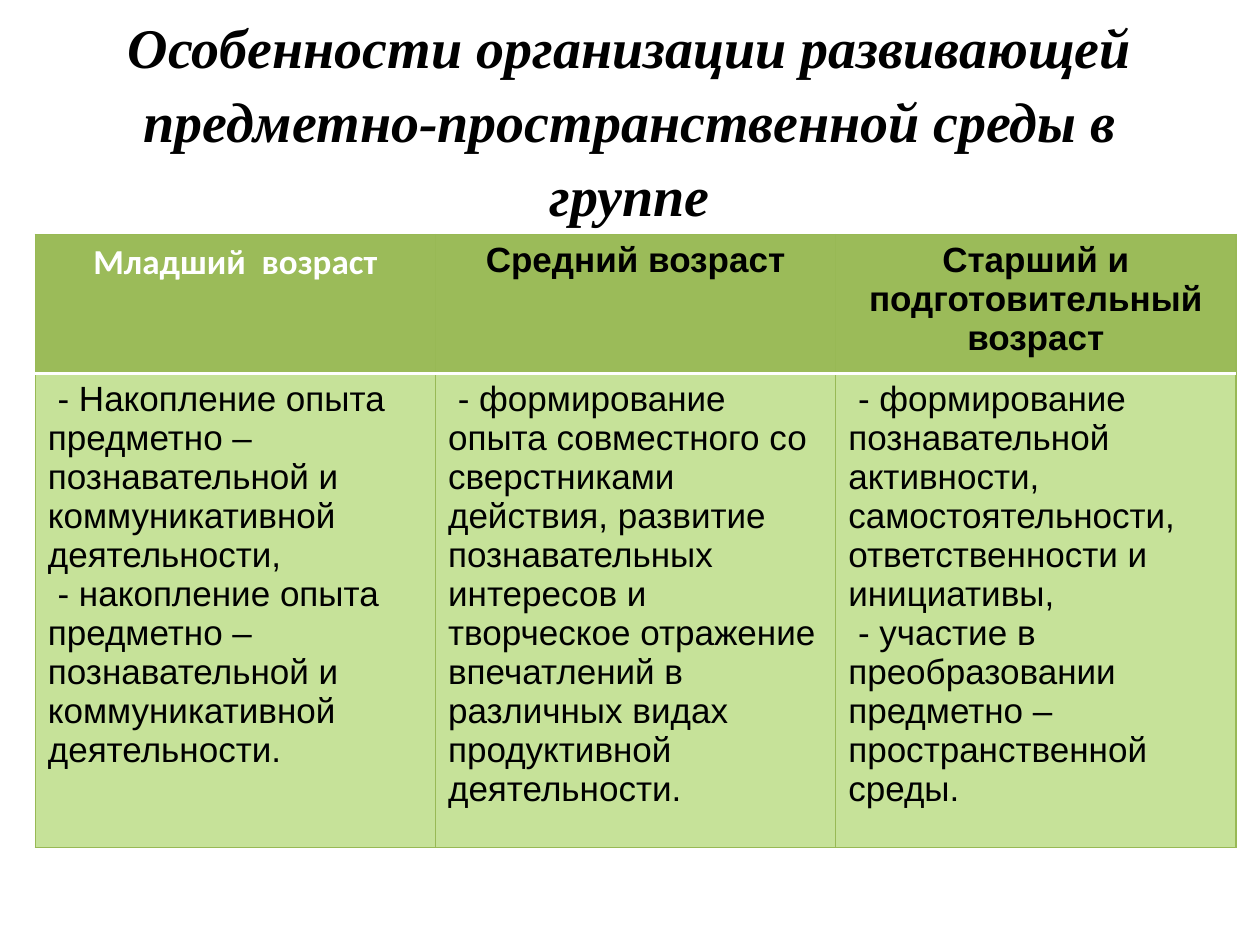
"""Build a slide comparing the learning environment by age group."""
from lxml.etree import SubElement
from pptx import Presentation
from pptx.dml.color import RGBColor
from pptx.enum.text import MSO_ANCHOR, PP_ALIGN
from pptx.oxml.ns import qn
from pptx.util import Inches, Pt

TITLE = "Особенности организации развивающей предметно-пространственной среды в группе"
AGES = [
    ("Младший  возраст", "Calibri", "FFFFFF", [
        " - Накопление опыта предметно – познавательной и коммуникативной деятельности,",
        " - накопление опыта предметно – познавательной и коммуникативной деятельности.",
    ]),
    ("Средний возраст", "Arial", "000000", [
        " - формирование опыта совместного со сверстниками действия, развитие познавательных "
        "интересов и творческое отражение впечатлений в различных видах продуктивной деятельности.",
    ]),
    ("Старший и подготовительный возраст", "Arial", "000000", [
        " - формирование познавательной активности, самостоятельности, ответственности и инициативы,",
        " - участие в преобразовании предметно – пространственной среды.",
    ]),
]
HEADER_FILL, BODY_FILL, BORDER, DIVIDER = "9BBB59", "C6E299", "98B955", "FFFFFF"
ROW_HEIGHTS = [1.03, 3.51]
TABLE_WIDTH = 9.53


def color(value):
    return RGBColor.from_string(value)


def style_text(frame, font, size, value, align, bold=False, italic=False):
    for para in frame.paragraphs:
        para.alignment = align
        for span in para.runs:
            span.font.name = font
            span.font.size = Pt(size)
            span.font.color.rgb = color(value)
            span.font.bold = bold
            span.font.italic = italic


def set_borders(cell, borders):
    properties = cell._tc.get_or_add_tcPr()
    for index, (side, (value, width)) in enumerate(borders.items()):
        line = SubElement(properties, qn(f"a:ln{side}"), w=str(Pt(width)))
        fill = SubElement(line, qn("a:solidFill"))
        SubElement(fill, qn("a:srgbClr"), val=value)
        properties.insert(index, line)


def fill_cell(cell, text, fill, font, value, align, bold, borders):
    cell.text_frame.text = text
    style_text(cell.text_frame, font, 20, value, align, bold)
    cell.fill.solid()
    cell.fill.fore_color.rgb = color(fill)
    set_borders(cell, borders)


def add_title(page):
    box = page.shapes.add_textbox(Inches(0.5), Inches(0.3), Inches(9), Inches(1.25))
    frame = box.text_frame
    frame.word_wrap = True
    frame.vertical_anchor = MSO_ANCHOR.MIDDLE
    frame.text = TITLE
    frame.paragraphs[0].line_spacing = 1.1
    style_text(frame, "Times New Roman", 32, "000000", PP_ALIGN.CENTER, True, True)


def add_age_table(page):
    table = page.shapes.add_table(
        len(ROW_HEIGHTS), len(AGES), Inches(0.28), Inches(1.86),
        Inches(TABLE_WIDTH), Inches(sum(ROW_HEIGHTS))).table
    for row, height in zip(table.rows, ROW_HEIGHTS):
        row.height = Inches(height)
    thin, thick = (BORDER, 0.75), (DIVIDER, 2)
    for index, (age, font, value, goals) in enumerate(AGES):
        table.columns[index].width = Inches(TABLE_WIDTH / len(AGES))
        fill_cell(table.cell(0, index), age, HEADER_FILL, font, value, PP_ALIGN.CENTER, True,
                  {"L": thin, "R": thin, "T": thin, "B": thick})
        fill_cell(table.cell(1, index), "\n".join(goals), BODY_FILL, "Arial", "000000",
                  PP_ALIGN.LEFT, False, {"L": thin, "R": thin, "T": thick, "B": thin})


def main():
    deck = Presentation()
    deck.slide_width, deck.slide_height = Inches(10), Inches(7.5)
    page = deck.slides.add_slide(deck.slide_layouts[6])
    add_title(page)
    add_age_table(page)
    deck.save("out.pptx")


if __name__ == "__main__":
    main()
